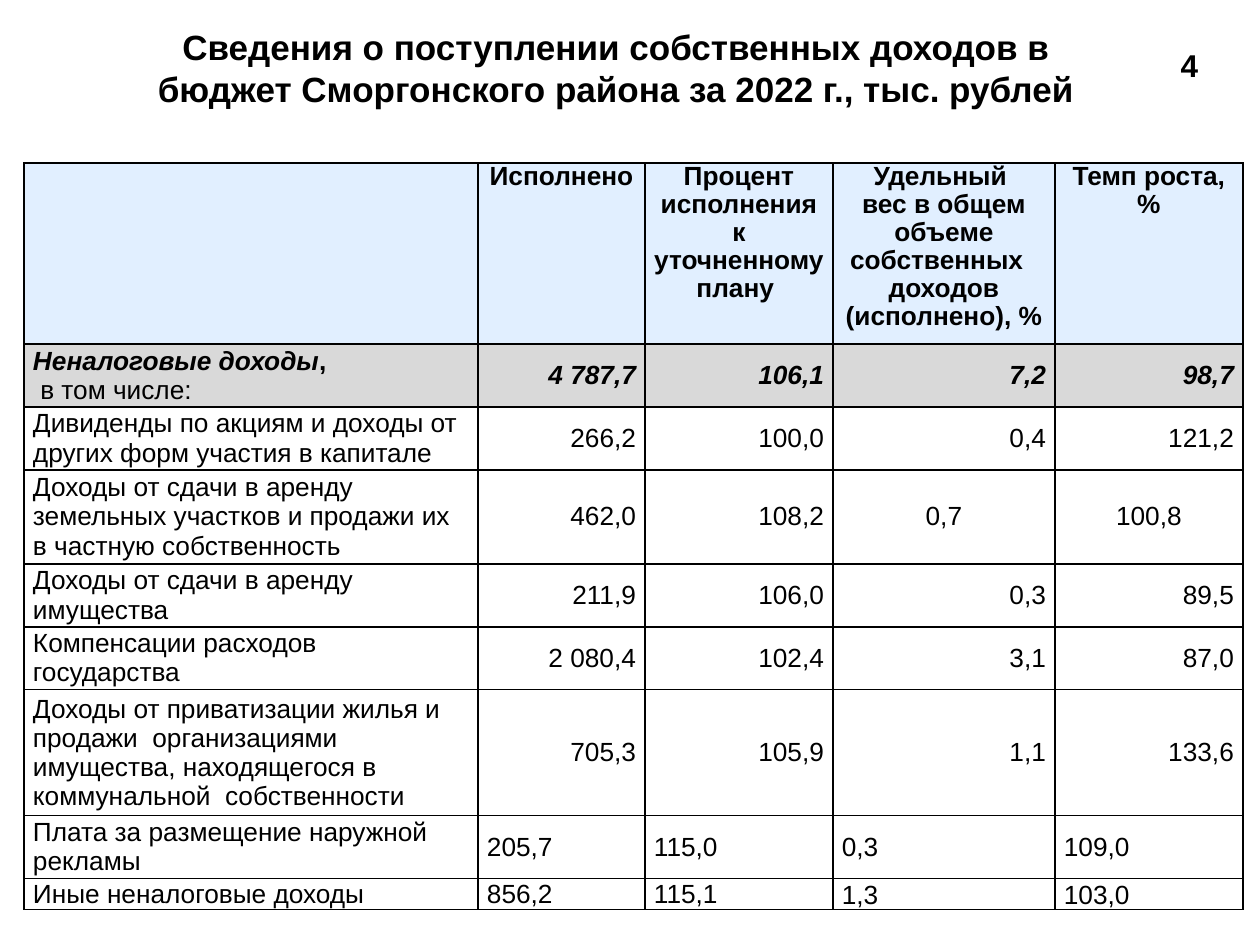
from lxml.etree import SubElement
from pptx import Presentation
from pptx.dml.color import RGBColor
from pptx.enum.text import MSO_ANCHOR as Anchor, PP_ALIGN as Align
from pptx.oxml.ns import qn
from pptx.util import Pt

# Content
TITLE = ("Сведения о поступлении собственных доходов в бюджет "
         "Сморгонского района за 2022 г., тыс. рублей")
PAGE_NUMBER = "4"
HEADERS = [
    [],
    ["Исполнено"],
    ["Процент исполнения к уточненному плану "],
    ["Удельный ", "вес в общем объеме собственных  ", "доходов (исполнено), %"],
    ["Темп роста,%"],
]
TOTAL_LABEL = [  # paragraphs of (text, bold, italic)
    [("Неналоговые доходы", True, True), (",", True, False)],
    [(" ", True, False), ("в том числе:", False, False)],
]
TOTALS = ["4 787,7", "106,1", "7,2", "98,7"]
# Label, values, alignment of each value (r, c or l)
INCOME = [
    ("Дивиденды по акциям и доходы от других форм участия в капитале",
     ["266,2", "100,0", "0,4", "121,2"], "rrrr"),
    ("Доходы от сдачи в аренду земельных участков и продажи их в частную собственность",
     ["462,0", "108,2", "0,7", "100,8"], "rrcc"),
    ("Доходы от сдачи в аренду имущества",
     ["211,9", "106,0", "0,3", "89,5"], "rrrr"),
    ("Компенсации расходов государства",
     ["2 080,4", "102,4", "3,1", "87,0"], "rrrr"),
    ("Доходы от приватизации жилья и продажи  организациями имущества, "
     "находящегося в коммунальной  собственности",
     ["705,3", "105,9", "1,1", "133,6"], "rrrr"),
    ("Плата за размещение наружной рекламы",
     ["205,7", "115,0", "0,3", "109,0"], "llll"),
    ("Иные неналоговые доходы",
     ["856,2", "115,1", "1,3", "103,0"], "llll"),
]

# Layout in px, 126 to the inch
PX = 914400 // 126
COLUMNS = [454, 167, 188, 222, 188]
ROWS = [181, 63, 63, 94, 63, 63, 126, 63, 31]
TABLE_LEFT, TABLE_TOP = 24, 163
CELL_MARGIN = 9

FONT = "Arial"
BLACK = RGBColor(0x00, 0x00, 0x00)
WHITE = RGBColor(0xFF, 0xFF, 0xFF)
PALE_BLUE = RGBColor(0xE1, 0xEF, 0xFF)
GREY = RGBColor(0xD9, 0xD9, 0xD9)
ALIGN = {"l": Align.LEFT, "c": Align.CENTER, "r": Align.RIGHT}


def write(frame, paragraphs, size, align, spacing=None):
    """Fill a text frame with paragraphs of (text, bold, italic) runs."""
    for index, spans in enumerate(paragraphs):
        para = frame.paragraphs[0] if index == 0 else frame.add_paragraph()
        para.alignment = ALIGN[align]
        if spacing:
            para.line_spacing = spacing
        for text, bold, italic in spans:
            span = para.add_run()
            span.text = text
            font = span.font
            font.name, font.size = FONT, Pt(size)
            font.bold, font.italic = bold, italic
            font.color.rgb = BLACK


def place(box, left, top, width, height):
    box.left, box.top = left * PX, top * PX
    box.width, box.height = width * PX, height * PX


def add_borders(cell):
    properties = cell._tc.get_or_add_tcPr()
    for index, side in enumerate(("lnL", "lnR", "lnT", "lnB")):
        line = SubElement(properties, qn(f"a:{side}"), w=str(Pt(1)))
        fill = SubElement(line, qn("a:solidFill"))
        SubElement(fill, qn("a:srgbClr"), val=str(BLACK))
        properties.insert(index, line)


def fill_cell(cell, paragraphs, color, align, anchor=Anchor.MIDDLE, spacing=None):
    cell.margin_left = cell.margin_right = CELL_MARGIN * PX
    cell.margin_top = cell.margin_bottom = 0
    cell.vertical_anchor = anchor
    cell.fill.solid()
    cell.fill.fore_color.rgb = color
    add_borders(cell)
    write(cell.text_frame, paragraphs, 15, align, spacing)


deck = Presentation()
deck.slide_width, deck.slide_height = 1260 * PX, 945 * PX
page = deck.slides.add_slide(deck.slide_layouts[5])

# Title
title = page.shapes.title
place(title, 105, 19, 1022, 97)
title.text_frame.word_wrap = True
title.text_frame.vertical_anchor = Anchor.MIDDLE
write(title.text_frame, [[(TITLE, True, False)]], 20, "c")

# Table grid
table = page.shapes.add_table(
    len(ROWS), len(COLUMNS), TABLE_LEFT * PX, TABLE_TOP * PX,
    sum(COLUMNS) * PX, sum(ROWS) * PX).table
for column, width in zip(table.columns, COLUMNS):
    column.width = width * PX
for row, height in zip(table.rows, ROWS):
    row.height = height * PX

# Header row
for column, lines in enumerate(HEADERS):
    fill_cell(table.cell(0, column), [[(line, True, False)] for line in lines],
              PALE_BLUE, "c", Anchor.TOP, Pt(16))

# Total row
fill_cell(table.cell(1, 0), TOTAL_LABEL, GREY, "l")
for column, value in enumerate(TOTALS, 1):
    fill_cell(table.cell(1, column), [[(value, True, True)]], GREY, "r")

# Income rows
for row, (label, values, aligns) in enumerate(INCOME, 2):
    for column, (text, align) in enumerate(zip([label, *values], "l" + aligns)):
        low = row == len(ROWS) - 1 and column >= 3
        fill_cell(table.cell(row, column), [[(text, False, False)]], WHITE, align,
                  Anchor.BOTTOM if low else Anchor.MIDDLE)

# Page number
number = page.shapes.add_textbox(0, 0, 0, 0)
place(number, 1155, 40, 69, 50)
number.text_frame.word_wrap = True
write(number.text_frame, [[(PAGE_NUMBER, True, False)]], 18, "c")

deck.save("out.pptx")
